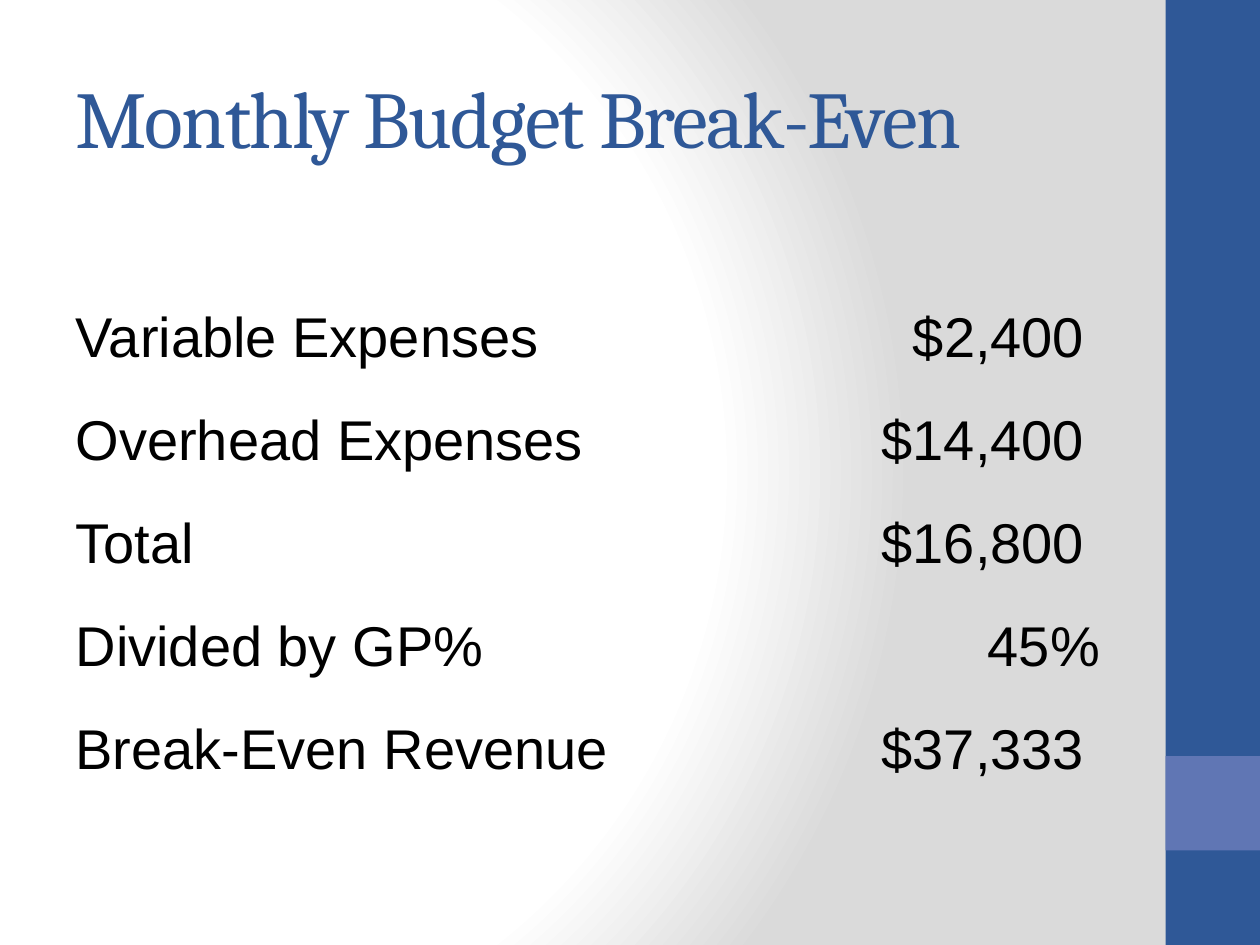
from dataclasses import dataclass

from pptx import Presentation
from pptx.dml.color import RGBColor
from pptx.enum.shapes import MSO_SHAPE as Shape
from pptx.enum.text import MSO_ANCHOR as Anchor, PP_ALIGN as Align
from pptx.oxml import parse_xml
from pptx.oxml.ns import nsdecls
from pptx.util import Inches, Pt

# Content
TITLE = "Monthly Budget Break-Even"
ROWS = [
    ("Variable Expenses", "$2,400 "),
    ("Overhead Expenses", "$14,400 "),
    ("Total", "$16,800 "),
    ("Divided by GP%", "45%"),
    ("Break-Even Revenue", "$37,333 "),
]


@dataclass(frozen=True)
class Theme:
    blue: str = "2F5897"
    accent: str = "6076B4"
    text: str = "000000"
    light: str = "FFFFFF"
    grey: str = "DADADA"
    title_font: str = "Cambria"
    body_font: str = "Arial"
    title_size: int = 46
    body_size: int = 32


T = Theme()
NO_STYLE = "{2D5ABB26-0587-4C30-8999-92F81FD0307C}"

# Layout, in inches
WIDTH, HEIGHT = 10, 7.5
BAR = 0.75
LEFT, CONTENT_W = 0.5, 8.33
TABLE_TOP, TABLE_H = 2.17, 4.08
COLS = (5.31, 3.02)


def write(tf, text, *, font, size, color, align=Align.LEFT, spacing=None):
    p = tf.paragraphs[0]
    p.alignment = align
    r = p.add_run()
    r.text = text
    r.font.name = font
    r.font.size = Pt(size)
    r.font.color.rgb = RGBColor.from_string(color)
    if spacing is not None:
        r.font._element.set("spc", str(int(spacing * 100)))


def add_background(s):
    stops = "".join(
        f'<a:gs pos="{pos * 1000}"><a:srgbClr val="{color}"/></a:gs>'
        for pos, color in ((0, T.light), (75, T.light), (100, T.grey))
    )
    s._element.cSld.insert(0, parse_xml(
        f'<p:bg {nsdecls("p", "a")}><p:bgPr><a:gradFill rotWithShape="1">'
        f'<a:gsLst>{stops}</a:gsLst><a:path path="circle">'
        '<a:fillToRect l="20000" t="50000" r="100000" b="50000"/></a:path>'
        '</a:gradFill><a:effectLst/></p:bgPr></p:bg>'
    ))


def add_bar(s, top, height, color):
    sp = s.shapes.add_shape(Shape.RECTANGLE, Inches(WIDTH - BAR), Inches(top),
                            Inches(BAR), Inches(height))
    sp.shadow.inherit = False
    sp.fill.solid()
    sp.fill.fore_color.rgb = RGBColor.from_string(color)
    sp.line.fill.background()


def add_title(s):
    sp = s.shapes.add_textbox(Inches(LEFT), Inches(0.3),
                              Inches(CONTENT_W), Inches(1.25))
    tf = sp.text_frame
    tf.word_wrap = True
    tf.vertical_anchor = Anchor.MIDDLE
    write(tf, TITLE, font=T.title_font, size=T.title_size, color=T.blue, spacing=-1)


def add_budget_table(s):
    frame = s.shapes.add_table(len(ROWS), len(COLS), Inches(LEFT), Inches(TABLE_TOP),
                               Inches(CONTENT_W), Inches(TABLE_H))
    table = frame.table
    table.first_row = table.horz_banding = False
    table._tbl.tblPr[0].text = NO_STYLE
    for column, width in zip(table.columns, COLS):
        column.width = Inches(width)
    for i, row in enumerate(ROWS):
        for j, (text, align) in enumerate(zip(row, (Align.LEFT, Align.RIGHT))):
            cell = table.cell(i, j)
            cell.fill.background()
            cell.vertical_anchor = Anchor.BOTTOM
            write(cell.text_frame, text, font=T.body_font, size=T.body_size,
                  color=T.text, align=align)


def main():
    prs = Presentation()
    prs.slide_width, prs.slide_height = Inches(WIDTH), Inches(HEIGHT)
    s = prs.slides.add_slide(prs.slide_layouts[6])

    # Background and side bar
    add_background(s)
    add_bar(s, 0, HEIGHT, T.blue)
    add_bar(s, 6, BAR, T.accent)

    # Title and figures
    add_title(s)
    add_budget_table(s)
    prs.save("out.pptx")


if __name__ == "__main__":
    main()
